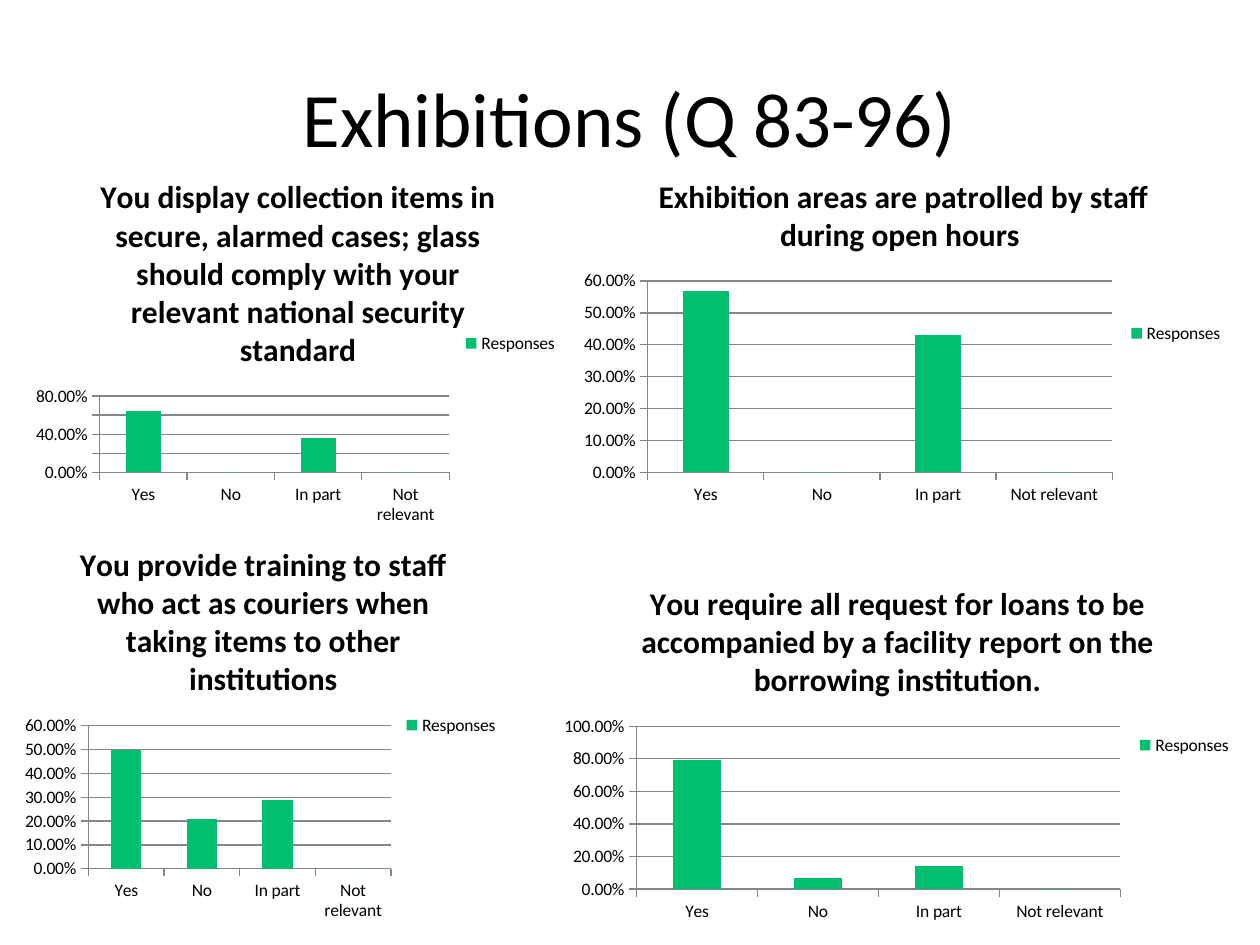
from pptx import Presentation
from pptx.chart.data import CategoryChartData
from pptx.dml.color import RGBColor
from pptx.enum.chart import XL_CHART_TYPE, XL_LEGEND_POSITION, XL_TICK_MARK
from pptx.enum.text import MSO_ANCHOR, PP_ALIGN
from pptx.util import Pt

COLUMN = XL_CHART_TYPE.COLUMN_CLUSTERED
RIGHT = XL_LEGEND_POSITION.RIGHT
OUT = XL_TICK_MARK.OUTSIDE
MIDDLE = MSO_ANCHOR.MIDDLE
CENTER = PP_ALIGN.CENTER

# Content
TITLE = "Exhibitions (Q 83-96)"
SERIES = "Responses"
ANSWERS = ["Yes", "No", "In part", "Not relevant"]
# Question, (left, top, width, height) in points, share of each answer
CHARTS = [
    ("You display collection items in secure, alarmed cases; glass should "
     "comply with your relevant national security standard",
     (14.4, 88.6, 311.8, 215.3), (0.64, 0, 0.36, 0)),
    ("Exhibition areas are patrolled by staff during open hours ",
     (326.2, 88.6, 380.2, 203.8), (0.57, 0, 0.43, 0)),
    ("You provide training to staff who act as couriers when taking items "
     "to other institutions",
     (8.6, 298.1, 283.7, 232.6), (0.5, 0.21, 0.29, 0)),
    ("You require all request for loans to be accompanied by a facility "
     "report on the borrowing institution.",
     (314.6, 321.1, 396.7, 209.5), (0.79, 0.07, 0.14, 0)),
]

THEME = {
    "font": "Calibri",
    "ink": RGBColor.from_string("000000"),
    "bar": RGBColor.from_string("00BF6F"),
    "rule": RGBColor.from_string("868686"),
    "title": 44, "head": 18, "label": 10,
}


def style(font, size, bold=False):
    font.name = THEME["font"]
    font.size = Pt(size)
    font.bold = bold
    font.color.rgb = THEME["ink"]


def write(frame, text, size, bold=False, align=CENTER):
    para = frame.paragraphs[0]
    para.alignment = align
    run = para.add_run()
    run.text = text
    style(run.font, size, bold)


def rule(line):
    line.color.rgb = THEME["rule"]
    line.width = Pt(0.75)


def draw(slide, head, box, shares):
    data = CategoryChartData(number_format="0.00%")
    data.categories = ANSWERS
    data.add_series(SERIES, shares)
    chart = slide.shapes.add_chart(COLUMN, *map(Pt, box), data).chart
    style(chart.font, THEME["label"])

    # Heading and legend
    chart.has_title = True
    write(chart.chart_title.text_frame, head, THEME["head"], bold=True)
    chart.has_legend = True
    chart.legend.position = RIGHT
    chart.legend.include_in_layout = False

    # Bars
    plot = chart.plots[0]
    plot.gap_width = 150
    plot.vary_by_categories = False
    fill = plot.series[0].format.fill
    fill.solid()
    fill.fore_color.rgb = THEME["bar"]

    # Axes
    for axis in (chart.category_axis, chart.value_axis):
        axis.major_tick_mark = OUT
        rule(axis.format.line)
    axis = chart.value_axis
    axis.has_major_gridlines = True
    rule(axis.major_gridlines.format.line)
    axis.tick_labels.number_format = "0.00%"
    axis.tick_labels.number_format_is_linked = False


def main():
    deck = Presentation()
    deck.slide_width, deck.slide_height = Pt(720), Pt(540)
    slide = deck.slides.add_slide(deck.slide_layouts[5])

    # Slide title
    title = slide.shapes.title
    title.left, title.top = Pt(36), Pt(21.6)
    title.width, title.height = Pt(648), Pt(90)
    title.text_frame.vertical_anchor = MIDDLE
    write(title.text_frame, TITLE, THEME["title"])

    # One chart per question
    for head, box, shares in CHARTS:
        draw(slide, head, box, shares)

    deck.save("out.pptx")


if __name__ == "__main__":
    main()
